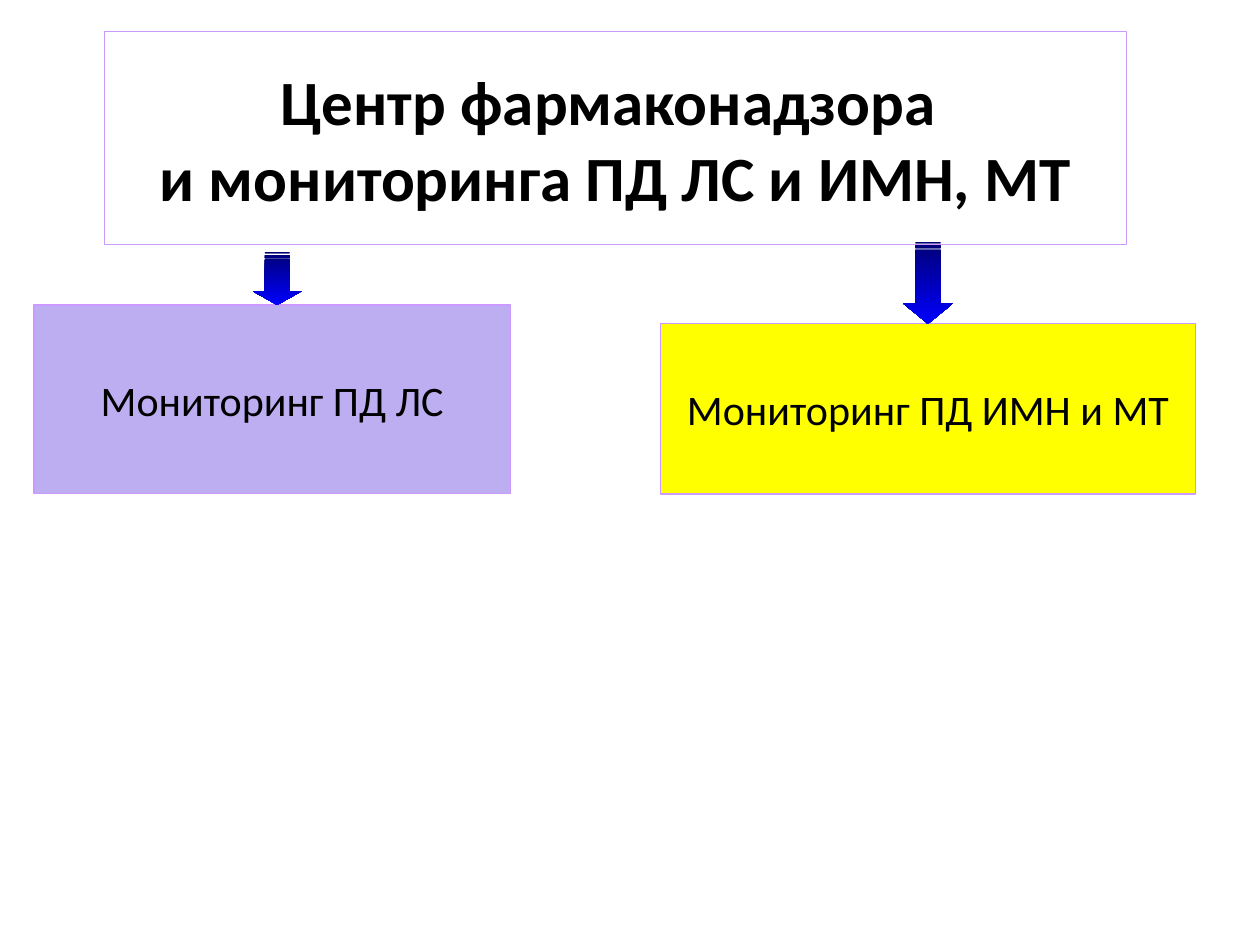
"""Build the slide on the pharmacovigilance centre and its two branches."""
from pptx import Presentation
from pptx.dml.color import RGBColor
from pptx.enum.shapes import MSO_SHAPE
from pptx.enum.text import MSO_ANCHOR, PP_ALIGN
from pptx.util import Inches, Pt

HUES = {"white": "FFFFFF", "black": "000000", "lilac": "BCAEF0",
        "edge": "CC99FF", "gold": "FFFF00", "navy": "000076", "blue": "0000FF"}
COLS, ROWS = 100, 75


def hue(name):
    """Return the named colour."""
    return RGBColor.from_string(HUES[name])


def write(frame, text, size=24, bold=False, color="black", face="Calibri"):
    """Put each line of the text in its own centred paragraph."""
    frame.word_wrap = False
    frame.vertical_anchor = MSO_ANCHOR.MIDDLE
    for i, line in enumerate(text.split("\n")):
        para = frame.add_paragraph() if i else frame.paragraphs[0]
        para.alignment = PP_ALIGN.CENTER
        run = para.add_run()
        run.text = line
        run.font.name = face
        run.font.size = Pt(size)
        run.font.bold = bold
        run.font.color.rgb = hue(color)


class Deck:
    """Hold the style and the current slide."""

    def __init__(self):
        """Start a file with one blank slide."""
        self.file = Presentation()
        self.file.slide_width, self.file.slide_height = Inches(10), Inches(7.5)
        self.slide = self.file.slides.add_slide(self.file.slide_layouts[6])

    def shape(self, kind, col, row, wide, high):
        """Place a preset shape on the grid."""
        x, w = (round(self.file.slide_width * n / COLS) for n in (col, wide))
        y, h = (round(self.file.slide_height * n / ROWS) for n in (row, high))
        item = self.slide.shapes.add_shape(kind, x, y, w, h)
        item.shadow.inherit = False
        return item

    def box(self, text, spot, fill, **form):
        """Add a filled box with text."""
        item = self.shape(MSO_SHAPE.RECTANGLE, *spot)
        item.fill.solid()
        item.fill.fore_color.rgb = hue(fill)
        item.line.color.rgb = hue("edge")
        item.line.width = Pt(0.75)
        write(item.text_frame, text, **form)

    def arrow(self, mid, tip, long, wide, head):
        """Add a striped arrow that points down to its tip."""
        item = self.shape(MSO_SHAPE.STRIPED_RIGHT_ARROW, mid - long / 2,
                          tip - long / 2 - wide / 2, long, wide)
        item.rotation = 90
        item.adjustments[0], item.adjustments[1] = 0.5, head
        item.fill.gradient()
        item.fill.gradient_angle = 0
        for stop, (name, place) in zip(item.fill.gradient_stops,
                                       (("navy", 0), ("blue", 1))):
            stop.color.rgb = hue(name)
            stop.position = place
        item.line.fill.background()


def main():
    """Draw the slide and save it."""
    deck = Deck()
    deck.box("Центр фармаконадзора \nи мониторинга ПД ЛС и ИМН, МТ",
             (8.3, 2.5, 81.1, 16.9), "white", size=36, bold=True)
    deck.box("Мониторинг ПД ЛС", (2.7, 24.2, 37.8, 15), "lilac")
    deck.box("Мониторинг ПД ИМН и МТ", (52.4, 25.7, 42.5, 13.5), "gold")
    deck.arrow(22, 24.2, 4.2, 3.9, 0.28)
    deck.arrow(73.65, 25.7, 6.5, 4, 0.41)
    deck.file.save("out.pptx")


if __name__ == "__main__":
    main()
